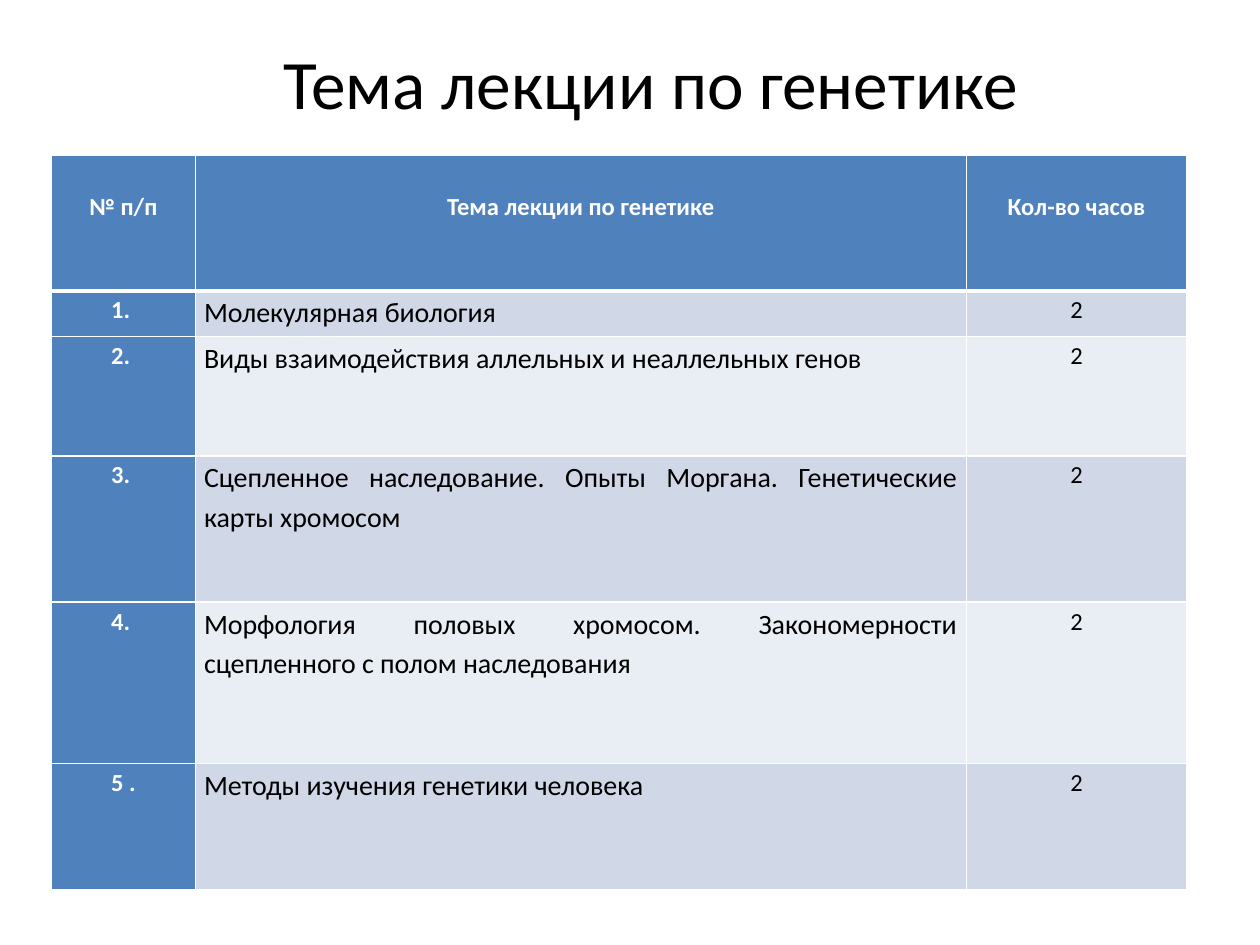
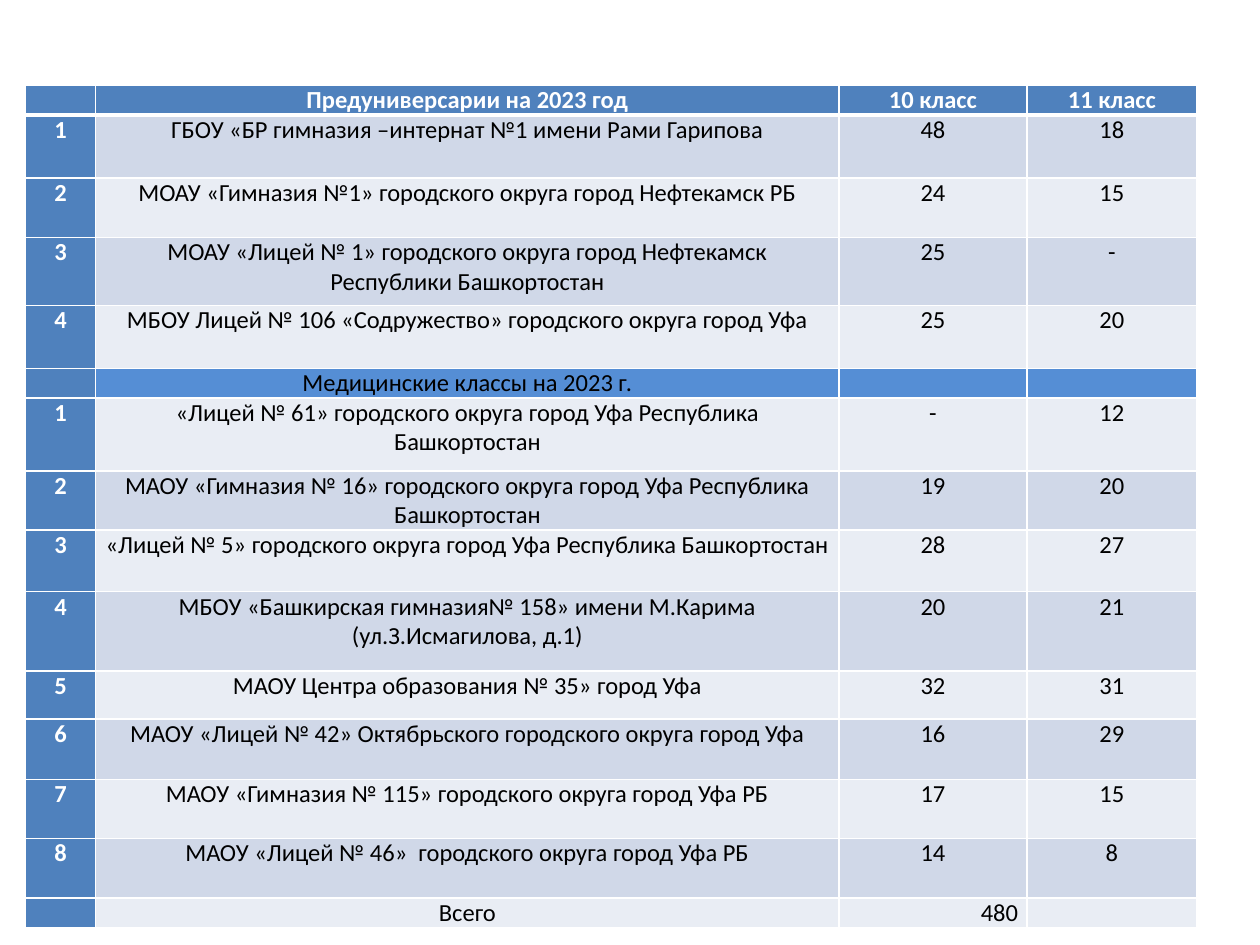
from dataclasses import dataclass

from lxml import etree
from pptx import Presentation
from pptx import util as u
from pptx.dml.color import RGBColor
from pptx.enum import text
from pptx.oxml.ns import qn

ALIGN = text.PP_ALIGN


@dataclass(frozen=True)
class Theme:
    """Colours, type sizes and line widths shared by the slides."""
    font: str = "Calibri"
    black: str = "000000"
    white: str = "FFFFFF"
    header: str = "4F81BD"
    section: str = "558ED5"
    band_dark: str = "D0D8E8"
    band_light: str = "E9EDF4"
    title_size: float = 39.6
    topic_size: int = 16
    cell_size: int = 14
    line: int = 1
    header_line: int = 3
    cell_margin: float = 0.07


THEME = Theme()

LECTURE_COLUMNS = [1.14, 6.12, 1.75]
LECTURES = [
    (1.08, "№ п/п", "Тема лекции по генетике", "Кол-во часов"),
    (0.36, "1. ", "Молекулярная биология", "2"),
    (0.95, "2. ", "Виды взаимодействия аллельных и неаллельных генов", "2"),
    (1.16, "3. ", "Сцепленное наследование. Опыты Моргана. Генетические карты хромосом", "2"),
    (1.28, "4. ", "Морфология половых хромосом. Закономерности сцепленного с полом наследования", "2"),
    (1.00, "5 .", "Методы изучения генетики человека", "2"),
]

SCHOOL_COLUMNS = [0.56, 5.9, 1.49, 1.35]
SECTION_ROW = 5
SCHOOLS = [
    (0.23, "", "Предуниверсарии на 2023 год", "10 класс", "11 класс"),
    (0.50, "1", "ГБОУ «БР гимназия –интернат №1 имени Рами Гарипова", "48", "18"),
    (0.47, "2", "МОАУ «Гимназия №1» городского округа город Нефтекамск РБ", "24", "15"),
    (0.54, "3", "МОАУ «Лицей № 1» городского округа город Нефтекамск Республики Башкортостан", "25", "-"),
    (0.50, "4", "МБОУ Лицей № 106 «Содружество» городского округа город Уфа", "25", "20"),
    (0.23, "", "Медицинские классы на 2023 г.", "", ""),
    (0.58, "1", "«Лицей № 61» городского округа город Уфа Республика Башкортостан", "-", "12"),
    (0.47, "2", "МАОУ «Гимназия № 16» городского округа город Уфа Республика Башкортостан", "19", "20"),
    (0.49, "3", "«Лицей № 5» городского округа город Уфа Республика Башкортостан", "28", "27"),
    (0.63, "4", "МБОУ «Башкирская гимназия№ 158» имени М.Карима (ул.З.Исмагилова, д.1)", "20", "21"),
    (0.38, "5", "МАОУ Центра образования № 35» город Уфа", "32", "31"),
    (0.48, "6", "МАОУ «Лицей № 42» Октябрьского городского округа город Уфа", "16", "29"),
    (0.47, "7", "МАОУ «Гимназия № 115» городского округа город Уфа РБ", "17", "15"),
    (0.47, "8", "МАОУ «Лицей № 46»  городского округа город Уфа РБ", "14", "8"),
    (0.24, "", "Всего", "480", ""),
]


def style_paragraph(para, size, color, bold=False, align=ALIGN.CENTER):
    """Format a paragraph, including one that holds no text."""
    para.alignment = align
    for span in para.runs:
        span.font.name = THEME.font
        span.font.size = u.Pt(size)
        span.font.bold = bold
        span.font.color.rgb = RGBColor.from_string(color)
    if not para.runs:
        etree.SubElement(para._p, qn("a:endParaRPr"), sz=str(size * 100))


def draw_borders(cell, top, bottom):
    """Give a cell white borders with the given top and bottom widths."""
    widths = {"a:lnL": THEME.line, "a:lnR": THEME.line, "a:lnT": top, "a:lnB": bottom}
    properties = cell._tc.get_or_add_tcPr()
    for position, (tag, width) in enumerate(widths.items()):
        line = etree.Element(qn(tag), w=str(u.Pt(width)))
        fill = etree.SubElement(line, qn("a:solidFill"))
        etree.SubElement(fill, qn("a:srgbClr"), val=THEME.white)
        properties.insert(position, line)


def add_title(page, box, wording):
    """Place a centred slide title in the box."""
    frame = page.shapes.add_textbox(*map(u.Inches, box)).text_frame
    frame.word_wrap = True
    frame.vertical_anchor = text.MSO_ANCHOR.MIDDLE
    frame.text = wording
    style_paragraph(frame.paragraphs[0], THEME.title_size, THEME.black)


def fill_cell(cell, wording, row, column):
    """Write a cell and style it as a heading or as part of a banded row."""
    heading = row == 0 or column == 0
    band = THEME.band_dark if row % 2 else THEME.band_light
    cell.fill.solid()
    cell.fill.fore_color.rgb = RGBColor.from_string(THEME.header if heading else band)
    draw_borders(cell, THEME.header_line if row == 1 else THEME.line,
                 THEME.header_line if row == 0 else THEME.line)
    cell.margin_left = cell.margin_right = u.Inches(THEME.cell_margin)
    cell.margin_top = cell.margin_bottom = 0
    cell.text_frame.text = wording
    style_paragraph(cell.text_frame.paragraphs[0], THEME.cell_size,
                    THEME.white if heading else THEME.black, heading)


def add_banded_table(page, box, columns, rows):
    """Place a table whose rows start with their height."""
    size = len(rows), len(columns)
    table = page.shapes.add_table(*size, *map(u.Inches, box)).table
    for column, width in zip(table.columns, columns):
        column.width = u.Inches(width)
    for index, (height, *wordings) in enumerate(rows):
        table.rows[index].height = u.Inches(height)
        for column, wording in enumerate(wordings):
            fill_cell(table.cell(index, column), wording, index, column)
    return table


def build_lectures(page):
    """Build the slide with the lecture topics."""
    add_title(page, (0.67, 0.29, 9, 0.71), "Тема лекции по генетике")
    table = add_banded_table(page, (0.41, 1.23, 9, 5.83), LECTURE_COLUMNS, LECTURES)
    for cell in table.iter_cells():
        cell.text_frame.paragraphs[0].line_spacing = 1.15
    for column in range(len(LECTURE_COLUMNS)):
        table.cell(0, column).margin_top = u.Inches(0.26)
    for row in range(1, len(LECTURES)):
        para = table.cell(row, 1).text_frame.paragraphs[0]
        style_paragraph(para, THEME.topic_size, THEME.black, align=ALIGN.JUSTIFY)


def build_schools(page):
    """Build the slide with the numbers of pupils by school."""
    table = add_banded_table(page, (0.2, 0.68, 9.3, 6.7), SCHOOL_COLUMNS, SCHOOLS)
    for column in range(1, len(SCHOOL_COLUMNS)):
        fill = table.cell(SECTION_ROW, column).fill
        fill.fore_color.rgb = RGBColor.from_string(THEME.section)
    total = table.cell(len(SCHOOLS) - 1, 2)
    total.text_frame.paragraphs[0].alignment = ALIGN.RIGHT


def main():
    """Build and save the deck."""
    deck = Presentation()
    deck.slide_width, deck.slide_height = u.Inches(10), u.Inches(7.5)
    for build in (build_lectures, build_schools):
        build(deck.slides.add_slide(deck.slide_layouts[6]))
    deck.save("out.pptx")


if __name__ == "__main__":
    main()
